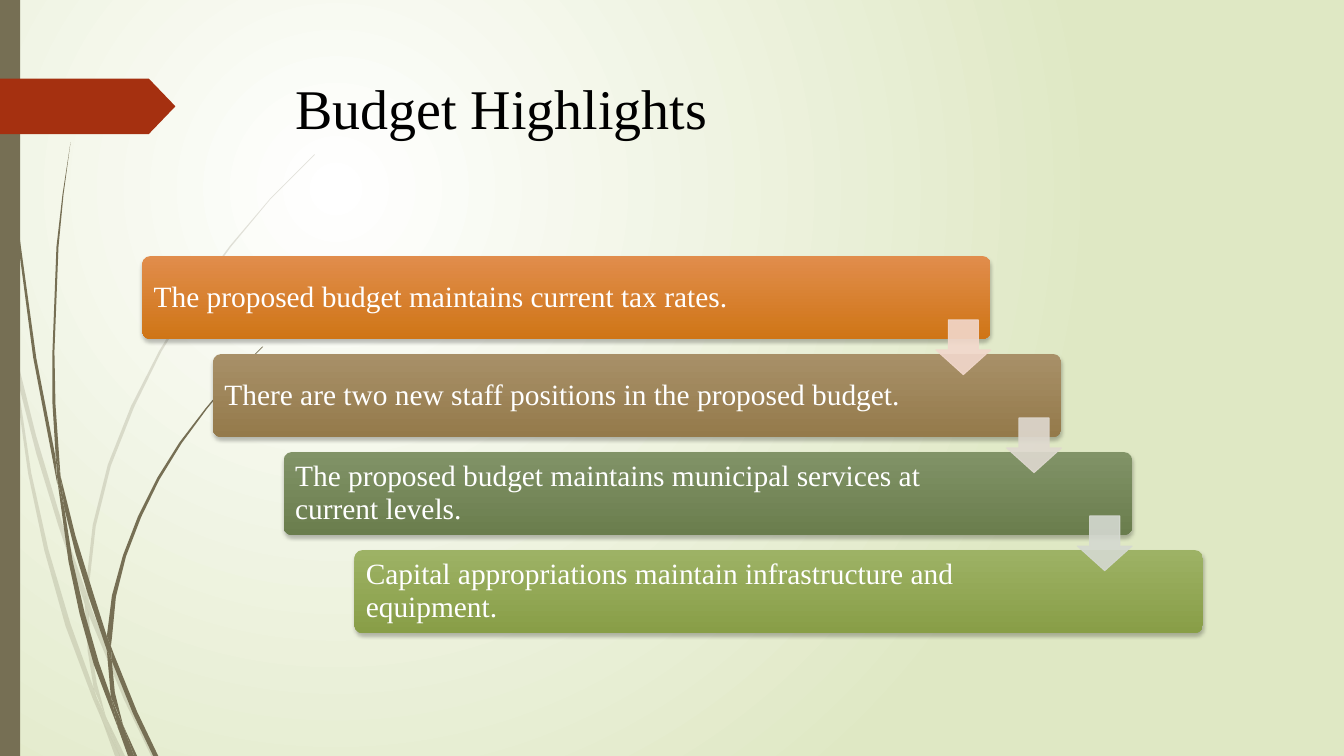
from collections import namedtuple
from lxml.etree import SubElement
from pptx import Presentation
from pptx.dml.color import RGBColor
from pptx.enum.shapes import MSO_SHAPE as Preset
from pptx.enum.text import MSO_ANCHOR as Anchor
from pptx.oxml.ns import qn
from pptx.util import Inches, Pt

Box = namedtuple("Box", "left top width height")
PAGE = Box(0, 0, 13.33, 7.5)
FONT = "Times New Roman"
COLORS = {
    "glow": "FFFFFF", "mist": "DFE8C4", "stem": "766F54", "tag": "A53010",
    "title": "000000", "label": "FFFFFF", "shadow": "000000",
}
STEPS = [
    ("The proposed budget maintains current tax rates.", "E18D4C", "CF7516", "F2D8CC"),
    ("There are two new staff positions in the proposed budget.", "A89068", "947A4B", "DFD9D0"),
    ("The proposed budget maintains municipal services at current levels.", "819367", "6A7D4D", "D5D9D1"),
    ("Capital appropriations maintain infrastructure and equipment.", "9DB265", "889E47", None),
]
BACK_BLADES = [
    [(0.11, 3.5), (0.09, 3.22), (0, 2.82), (0, 2.99), (0.1, 3.44)],
    [(0.58, 5.22), (0.84, 5.99), (0.85, 5.86), (0.62, 5.2), (0.36, 4.33), (0.14, 3.45),
     (0.17, 3.76), (0.36, 4.5)],
    [(0.92, 6.07), (0.88, 5.96), (0.88, 6.1), (1.23, 6.94), (1.5, 7.5), (1.55, 7.5), (1.27, 6.92)],
    [(1.19, 7.5), (1.24, 7.5), (1.05, 7.11)],
    [(0.93, 6.83), (0.7, 6.19), (0.48, 5.45), (0.31, 4.69), (0.17, 3.76), (0.11, 3.5),
     (0.28, 4.7), (0.44, 5.46), (0.65, 6.21), (0.92, 6.93), (1.01, 7.14)],
    [(0.84, 5.99), (0.87, 6.46), (0.93, 6.83), (1.05, 7.11), (0.96, 6.78), (0.91, 6.46), (0.88, 6.08)],
    [(0.88, 5.84), (0.95, 5.22), (1.1, 4.62), (1.33, 4.04), (1.6, 3.49), (1.93, 2.95), (2.29, 2.45),
     (2.68, 1.98), (3.12, 1.54), (3.12, 1.53), (2.68, 1.97), (2.28, 2.44), (1.91, 2.94), (1.58, 3.48),
     (1.3, 4.03), (1.07, 4.61), (0.92, 5.21), (0.85, 5.84), (0.88, 5.96)],
    [(1.01, 7.14), (1.14, 7.5), (1.19, 7.5)],
    [(0.88, 6.08), (0.88, 5.96), (0.85, 5.86), (0.84, 5.99)],
    [(0.96, 6.92), (0.93, 6.83), (1.01, 7.14), (1.19, 7.5), (1.05, 7.11)],
]
FRONT_BLADES = [
    [(0.07, 1.1), (0.17, 2.33), (0.33, 3.55), (0.57, 4.81), (0.55, 4.53), (0.36, 3.55), (0.19, 2.32),
     (0.08, 1.09), (0.04, 0), (0.03, 0)],
    [(0.88, 5.92), (1.06, 6.45), (1.06, 6.31), (0.93, 5.9), (0.75, 5.32), (0.6, 4.72), (0.64, 5.05),
     (0.75, 5.49)],
    [(1.13, 6.49), (1.1, 6.41), (1.11, 6.56), (1.32, 7.08), (1.52, 7.5), (1.57, 7.5), (1.36, 7.06)],
    [(1.1, 6.91), (0.98, 6.57), (0.84, 6.08), (0.72, 5.56), (0.64, 5.05), (0.57, 4.77), (0.68, 5.57),
     (0.79, 6.09), (0.93, 6.59), (1.17, 7.22)],
    [(0.6, 4.72), (0.55, 4.01), (0.54, 3.49), (0.58, 2.45), (0.63, 1.93), (0.7, 1.41), (0.62, 1.93),
     (0.56, 2.45), (0.52, 3.49), (0.52, 4), (0.55, 4.49)],
    [(1.33, 7.5), (1.36, 7.5), (1.22, 7.19)],
    [(0.57, 4.77), (0.64, 5.05), (0.6, 4.72), (0.55, 4.49)],
    [(1.11, 6.33), (1.15, 5.92), (1.25, 5.52), (1.4, 5.13), (1.58, 4.76), (1.8, 4.4), (2.05, 4.06),
     (2.31, 3.74), (2.61, 3.44), (2.6, 3.44), (2.31, 3.73), (2.04, 4.05), (1.78, 4.39), (1.56, 4.74),
     (1.37, 5.12), (1.22, 5.51), (1.11, 5.91), (1.06, 6.31), (1.1, 6.41)],
    [(1.17, 7.22), (1.27, 7.5), (1.31, 7.5)],
    [(1.06, 6.45), (1.1, 6.91), (1.22, 7.19), (1.14, 6.87), (1.11, 6.56)],
    [(1.06, 6.45), (1.11, 6.56), (1.1, 6.41), (1.06, 6.31)],
    [(1.16, 7.06), (1.1, 6.91), (1.17, 7.22), (1.3, 7.5), (1.33, 7.5), (1.22, 7.19)],
]


def inches(lengths):
    return [Inches(length) for length in lengths]


def paint(fill, color, opacity=100):
    fill.solid()
    fill.fore_color.rgb = RGBColor.from_string(color)
    if opacity < 100:
        tint = fill._xPr.find(".//" + qn("a:srgbClr"))
        SubElement(tint, qn("a:alpha"), val=str(opacity * 1000))


def blend(fill, *colors):
    fill.gradient()
    for stop, position, color in zip(fill.gradient_stops, (0, 1), colors):
        stop.position = position
        stop.color.rgb = RGBColor.from_string(color)


def add_preset(page, preset, box):
    shape = page.shapes.add_shape(preset, *inches(box))
    shape.shadow.inherit = False
    shape.line.fill.background()
    return shape


def add_text(page, box, text, size, color):
    frame = page.shapes.add_textbox(*inches(box)).text_frame
    frame.word_wrap = True
    para = frame.paragraphs[0]
    span = para.add_run()
    span.text = text
    span.font.name = FONT
    span.font.size = Pt(size)
    span.font.color.rgb = RGBColor.from_string(color)
    return frame


def add_blade(page, box, outline, opacity):
    start, *rest = [inches((box.left + x, box.top + y)) for x, y in outline]
    builder = page.shapes.build_freeform(*start)
    builder.add_line_segments(rest)
    blade = builder.convert_to_shape()
    blade.shadow.inherit = False
    blade.line.fill.background()
    paint(blade.fill, COLORS["stem"], opacity)


def add_backdrop(page, box):
    blend(page.background.fill, COLORS["glow"], COLORS["mist"])
    gradient = page._element.find(".//" + qn("a:gradFill"))
    gradient.remove(gradient.find(qn("a:lin")))
    radial = SubElement(gradient, qn("a:path"))
    radial.set("path", "circle")
    SubElement(radial, qn("a:fillToRect"), l="50000", t="50000", r="100000", b="100000")
    for blades, opacity in ((BACK_BLADES, 20), (FRONT_BLADES, 100)):
        for outline in blades:
            add_blade(page, box, outline, opacity)
    bar = add_preset(page, Preset.RECTANGLE, Box(box.left, box.top, 0.2, box.height))
    paint(bar.fill, COLORS["stem"])
    tag = add_preset(page, Preset.PENTAGON, Box(box.left, box.top + 0.78, 1.74, 0.55))
    tag.adjustments[0] = 0.48
    paint(tag.fill, COLORS["tag"])


def add_bar(page, box, text, light, dark):
    bar = add_preset(page, Preset.ROUNDED_RECTANGLE, box)
    bar.adjustments[0] = 0.1
    blend(bar.fill, light, dark)
    bar.fill.gradient_angle = 270
    effects = bar._element.spPr.find(qn("a:effectLst"))
    shadow = SubElement(effects, qn("a:outerShdw"), blurRad=str(Pt(3)), dist=str(Pt(2)),
                        dir="5400000", algn="ctr", rotWithShape="0")
    tint = SubElement(shadow, qn("a:srgbClr"), val=COLORS["shadow"])
    SubElement(tint, qn("a:alpha"), val="25000")
    gap = 0.03 * box.height
    label = Box(box.left + gap, box.top + gap, 0.85 * box.width, box.height - 2 * gap)
    frame = add_text(page, label, text, 21, COLORS["label"])
    frame.vertical_anchor = Anchor.MIDDLE
    frame.margin_left = frame.margin_right = Inches(0.09)
    frame.margin_top = frame.margin_bottom = Inches(0.09)
    frame.paragraphs[0].line_spacing = 0.93


def add_down_arrow(page, bar, color):
    size = 0.66 * bar.height
    spot = Box(bar.left + bar.width - size, bar.top + 0.77 * bar.height, size, size)
    arrow = add_preset(page, Preset.DOWN_ARROW, spot)
    arrow.adjustments[0] = 0.55
    arrow.adjustments[1] = 0.45
    paint(arrow.fill, color, 90)
    arrow.line.width = Pt(0.75)
    paint(arrow.line.fill, color, 90)


def add_staircase(page, box):
    shift = 0.2 * box.width / (len(STEPS) - 1)
    pitch = 0.26 * box.height
    bars = [
        Box(box.left + step * shift, box.top + step * pitch, 0.8 * box.width, 0.22 * box.height)
        for step in range(len(STEPS))
    ]
    for bar, (text, light, dark, _) in zip(bars, STEPS):
        add_bar(page, bar, text, light, dark)
    for bar, (*_, arrow_color) in zip(bars[:-1], STEPS):
        add_down_arrow(page, bar, arrow_color)


def main():
    deck = Presentation()
    deck.slide_width, deck.slide_height = Inches(PAGE.width), Inches(PAGE.height)
    page = deck.slides.add_slide(deck.slide_layouts[6])
    add_backdrop(page, PAGE)
    add_text(page, Box(2.83, 0.68, 9.75, 1.4), "Budget Highlights", 40, COLORS["title"])
    add_staircase(page, Box(1.41, 2.54, 10.52, 3.74))
    deck.save("out.pptx")


if __name__ == "__main__":
    main()
